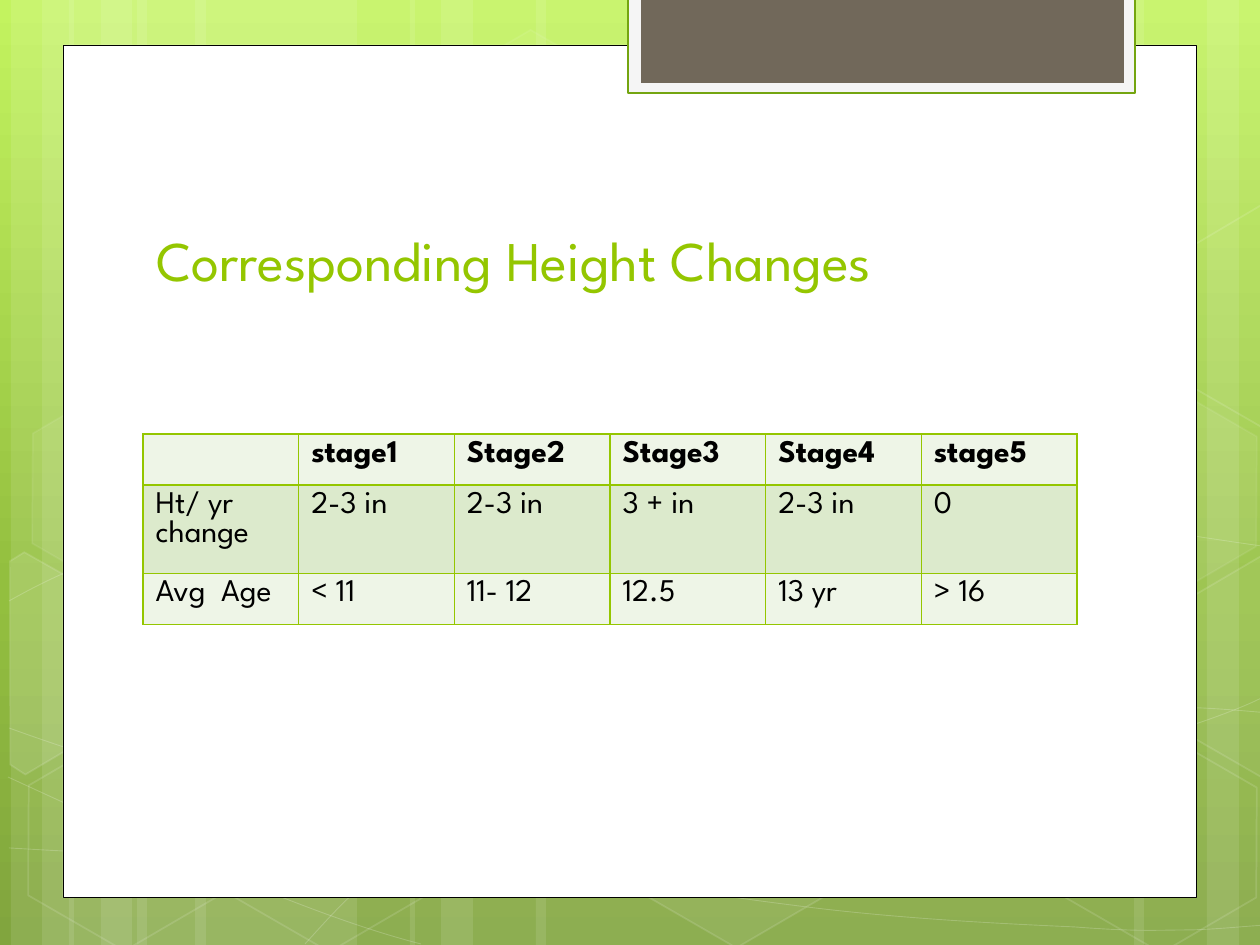
from copy import deepcopy
from dataclasses import dataclass
from math import cos, radians, sin
from lxml.etree import SubElement
from pptx import Presentation
from pptx.dml.color import RGBColor
from pptx.enum.shapes import MSO_SHAPE
from pptx.enum.text import MSO_ANCHOR
from pptx.oxml import parse_xml
from pptx.oxml.ns import nsdecls, qn
from pptx.util import Pt

PX = 914400 / 126
TILT = 30


@dataclass(frozen=True)
class Theme:
    font: str = "League Spartan"
    title_size: int = 32
    cell_size: int = 18
    accent: str = "94C600"
    frame: str = "74A510"
    frame_fill: str = "F5F5F5"
    tab: str = "71685A"
    white: str = "FFFFFF"
    black: str = "000000"
    bands: tuple = ("EEF5E7", "DCEACC")
    sky: tuple = ((0, "C3F35F"), (0.62, "93BF3F"), (1, "81A53E"))


T = Theme()

BARS = [
    (137, 220), (11, 63), (42, 105), (195, 220), (69, 63), (101, 105),
    (924, 220), (1207, 63), (1134, 105), (536, 388), (410, 63), (441, 105),
]

CURVES = [
    [(9, 848), (77, 852), (145, 856), (239, 854), (334, 853), (451, 851), (577, 838),
     (703, 825), (882, 801), (998, 777), (1113, 753), (1231, 716), (1269, 694)],
    [(9, 601), (45, 581), (82, 562), (152, 543), (224, 524), (326, 496), (437, 488),
     (549, 479), (685, 478), (824, 488), (963, 498), (1193, 537), (1269, 547)],
    [(8, 777), (160, 847), (311, 916), (421, 944)],
    [(9, 728), (48, 742), (88, 756), (161, 776), (234, 795), (344, 827), (450, 848),
     (554, 869), (687, 892), (791, 905), (896, 919), (1008, 924), (1075, 927),
     (1140, 932), (1158, 930), (1191, 930), (1223, 929), (1246, 926), (1269, 925)],
    [(305, 944), (328, 919), (350, 893), (381, 871), (411, 848), (454, 823), (489, 805),
     (524, 788), (546, 780), (592, 767), (638, 755), (722, 737), (766, 728),
     (811, 719), (818, 719), (857, 717), (896, 713), (958, 709), (1000, 708),
     (1045, 707), (1116, 708), (1116, 708), (1144, 708), (1173, 708), (1201, 708),
     (1223, 709), (1245, 711), (1268, 713)],
]

HEXAGONS = [
    (421, 45, 4, 8), (626, 742, 6, 12), (14, 745, None, 12), (18, 393, 7, 8),
    (219, 746, None, 12), (949, 571, 10, 12), (1051, 747, None, 12), (1051, 396, 7, 8),
]

CUT_HEXAGONS = [
    ((45, 674), [(10, 561), (24, 552), (121, 607), (120, 718), (25, 774), (10, 765)], 10),
    ((1241, 655), [(1167, 611), (1261, 556), (1271, 562), (1271, 772), (1263, 777),
                   (1167, 722)], 4),
    ((1241, 304), [(1167, 261), (1261, 205), (1272, 212), (1271, 422), (1263, 427),
                   (1167, 372)], None),
]

ROWS = [
    ["", "stage1", "Stage2", "Stage3", "Stage4", "stage5"],
    ["Ht/ yr  change", "2-3 in", "2-3 in", "3 + in", "2-3 in", "0"],
    ["Avg  Age", "< 11", "11- 12", "12.5", "13 yr", "> 16"],
]


def emu(*lengths):
    return [round(n * PX) for n in lengths]


def set_color(fill, parent, color, alpha):
    fill.solid()
    fill.fore_color.rgb = RGBColor.from_string(color)
    if alpha < 100:
        clr = parent.find(qn("a:solidFill")).find(qn("a:srgbClr"))
        SubElement(clr, qn("a:alpha"), val=str(alpha * 1000))


def paint(sp, fill=None, fill_alpha=100, line=None, width=1, line_alpha=100):
    sp.shadow.inherit = False
    spPr = sp.element.spPr
    if fill:
        set_color(sp.fill, spPr, fill, fill_alpha)
    else:
        sp.fill.background()
    if line:
        sp.line.width = Pt(width)
        set_color(sp.line.fill, spPr.find(qn("a:ln")), line, line_alpha)
    else:
        sp.line.fill.background()


def set_font(p, size, color, bold=False):
    p.font.name, p.font.size, p.font.bold = T.font, Pt(size), bold
    p.font.color.rgb = RGBColor.from_string(color)


def add_box(s, box, shape=MSO_SHAPE.RECTANGLE, **style):
    sp = s.shapes.add_shape(shape, *emu(*box))
    paint(sp, **style)
    return sp


def add_path(s, box, points, close, **style):
    x, y = box[:2]
    points = [(x + px, y + py) for px, py in points]
    builder = s.shapes.build_freeform(*points[0], scale=PX)
    builder.add_line_segments(points[1:], close=close)
    sp = builder.convert_to_shape()
    paint(sp, **style)
    return sp


def bend(sp):
    segments = list(sp.element.iter(qn("a:lnTo")))
    for i in range(0, len(segments), 3):
        curve = SubElement(segments[i].getparent(), qn("a:cubicBezTo"))
        for segment in segments[i:i + 3]:
            curve.append(segment[0])
            segment.getparent().remove(segment)


def turn_back(points, center):
    cx, cy = center
    c, n = cos(radians(TILT)), sin(radians(TILT))
    return [(cx + (x - cx) * c + (y - cy) * n, cy - (x - cx) * n + (y - cy) * c)
            for x, y in points]


def add_background(s):
    fill = s.background.fill
    fill.gradient()
    fill.gradient_angle = 270
    last = list(s.element.iter(qn("a:gs")))[-1]
    last.addnext(deepcopy(last))
    for stop, (position, color) in zip(fill.gradient_stops, T.sky):
        stop.position = position
        stop.color.rgb = RGBColor.from_string(color)


def add_backdrop(s, box):
    x, y, w, h = box
    for left, width in BARS:
        add_box(s, (x + left, y, width, h), fill=T.white, fill_alpha=10)
    for knots in CURVES:
        bend(add_path(s, box, knots, False, line=T.white, width=0.5, line_alpha=20))
    for left, top, alpha, line_alpha in HEXAGONS:
        sp = add_box(s, (x + left, y + top, 220, 191), MSO_SHAPE.HEXAGON,
                     fill=T.white if alpha else None, fill_alpha=alpha,
                     line=T.white, line_alpha=line_alpha)
        sp.adjustments[0] = 0.285
        sp.rotation = TILT
    for center, points, alpha in CUT_HEXAGONS:
        sp = add_path(s, box, turn_back(points, center), True,
                      fill=T.white if alpha else None, fill_alpha=alpha,
                      line=T.white, line_alpha=12)
        sp.rotation = TILT


def add_panel(s, box):
    x, y, w, h = box
    add_box(s, box, fill=T.white, line=T.black, width=0.5)
    add_box(s, (x + 565, y - 48, 507, 96), fill=T.frame_fill, line=T.frame, width=1.25)
    add_box(s, (x + 578, y - 48, 483, 86), fill=T.tab)


def add_title(s, box, text):
    tf = s.shapes.add_textbox(*emu(*box)).text_frame
    tf.word_wrap = True
    tf.vertical_anchor = MSO_ANCHOR.BOTTOM
    p = tf.paragraphs[0]
    p.text = text
    set_font(p, T.title_size, T.accent)


def add_borders(cell):
    tcPr = cell._tc.get_or_add_tcPr()
    for i, side in enumerate("LRTB"):
        tcPr.insert(i, parse_xml(
            f'<a:ln{side} {nsdecls("a")} w="12700"><a:solidFill>'
            f'<a:srgbClr val="{T.accent}"/></a:solidFill></a:ln{side}>'))


def add_stage_table(s, box, rows, row_height):
    table = s.shapes.add_table(len(rows), len(rows[0]), *emu(*box)).table
    table.first_row = table.horz_banding = False
    for col in table.columns:
        col.width = round(box[2] * PX / len(rows[0]))
    for i, row in enumerate(rows):
        table.rows[i].height = round(row_height * PX)
        for j, text in enumerate(row):
            cell = table.cell(i, j)
            cell.fill.solid()
            cell.fill.fore_color.rgb = RGBColor.from_string(T.bands[i % 2])
            add_borders(cell)
            p = cell.text_frame.paragraphs[0]
            p.text = text
            set_font(p, T.cell_size, T.black, bold=i == 0)


def main():
    prs = Presentation()
    prs.slide_width, prs.slide_height = emu(1260, 945)
    s = prs.slides.add_slide(prs.slide_layouts[6])
    add_background(s)
    add_backdrop(s, (0, 0, 1260, 945))
    add_panel(s, (63, 45, 1134, 853))
    add_title(s, (144, 141, 968, 158), "Corresponding Height Changes")
    add_stage_table(s, (143, 434, 934, 153), ROWS, 51)
    prs.save("out.pptx")


if __name__ == "__main__":
    main()
